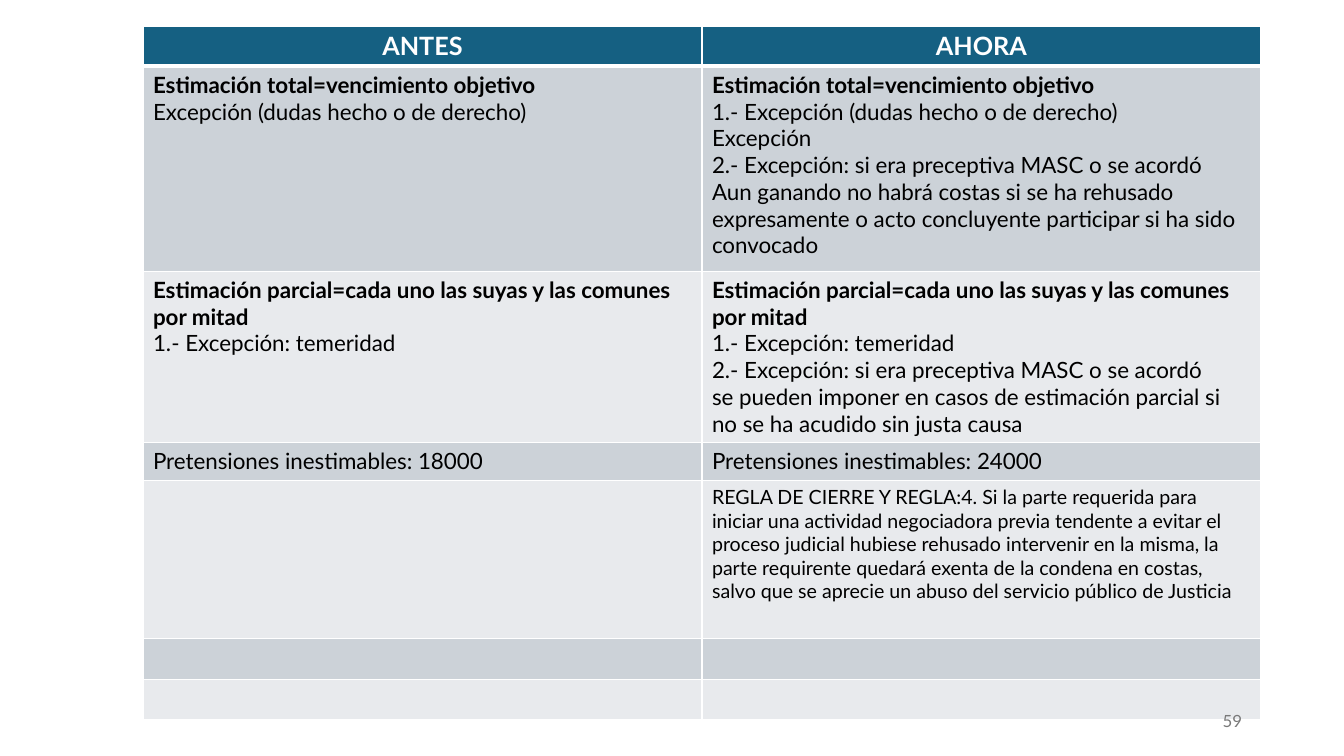
"""Build the slide comparing the cost rules before and now."""
from dataclasses import dataclass

from lxml.etree import SubElement
from pptx import Presentation
from pptx.dml.color import RGBColor
from pptx.enum.text import MSO_ANCHOR, PP_ALIGN
from pptx.oxml.ns import qn
from pptx.slide import Slide
from pptx.table import _Cell
from pptx.text.text import _Paragraph
from pptx.util import Emu, Pt

EMU_PER_PX = 12192000 / 1344


@dataclass(frozen=True)
class Theme:
    font: str = "Lato"
    header_fill: str = "156082"
    band_fills: tuple[str, str] = ("CCD2D8", "E8EAED")
    white: str = "FFFFFF"
    black: str = "000000"
    gray: str = "797979"
    header_size: int = 18
    body_size: int = 16
    closing_size: int = 14
    number_size: int = 12
    thin_border: int = 1
    thick_border: int = 3


@dataclass(frozen=True)
class CellText:
    heading: str = ""
    lines: tuple[str, ...] = ()
    size: int = 16


@dataclass(frozen=True)
class TableRow:
    height: int
    before: CellText = CellText()
    now: CellText = CellText()


THEME = Theme()
HEADER_HEIGHT = 40
HEADERS = ("ANTES", "AHORA")
TOTAL = "Estimación total=vencimiento objetivo"
PARTIAL = "Estimación parcial=cada uno las suyas y las comunes por mitad"
RECKLESS = "1.- Excepción: temeridad"
MANDATORY = "2.- Excepción: si era preceptiva MASC o se acordó"
ROWS = (
    TableRow(
        205,
        CellText(TOTAL, ("Excepción (dudas hecho o de derecho)",)),
        CellText(TOTAL, (
            "1.- Excepción (dudas hecho o de derecho)",
            "Excepción",
            MANDATORY,
            "Aun ganando no habrá costas si se ha rehusado expresamente o acto "
            "concluyente participar si ha sido convocado",
        )),
    ),
    TableRow(
        171,
        CellText(PARTIAL, (RECKLESS,)),
        CellText(PARTIAL, (
            RECKLESS,
            MANDATORY,
            "se pueden imponer en casos de estimación parcial si no se ha acudido "
            "sin justa causa",
        )),
    ),
    TableRow(
        38,
        CellText(lines=("Pretensiones inestimables: 18000",)),
        CellText(lines=("Pretensiones inestimables: 24000",)),
    ),
    TableRow(
        158,
        now=CellText(lines=(
            "REGLA DE CIERRE Y REGLA:4. Si la parte requerida para iniciar una "
            "actividad negociadora previa tendente a evitar el proceso judicial "
            "hubiese rehusado intervenir en la misma, la parte requirente quedará "
            "exenta de la condena en costas, salvo que se aprecie un abuso del "
            "servicio público de Justicia",
        ), size=THEME.closing_size),
    ),
    TableRow(40),
    TableRow(40),
)


def px(length: int) -> Emu:
    """Turn pixels into EMU."""
    return Emu(round(length * EMU_PER_PX))


def write(paragraph: _Paragraph, text: str, size: int, color: str,
          bold: bool = False, align: PP_ALIGN = PP_ALIGN.LEFT) -> None:
    """Fill a paragraph and format it."""
    paragraph.text = text
    paragraph.alignment = align
    font = paragraph.font
    font.name, font.size, font.bold = THEME.font, Pt(size), bold
    font.color.rgb = RGBColor.from_string(color)


def style_cell(cell: _Cell, fill: str, top: int, bottom: int) -> None:
    """Give a cell its white borders and its fill."""
    properties = cell._tc.get_or_add_tcPr()
    thin = THEME.thin_border
    for side, width in (("L", thin), ("R", thin), ("T", top), ("B", bottom)):
        line = SubElement(properties, qn(f"a:ln{side}"), w=str(Pt(width)))
        solid = SubElement(line, qn("a:solidFill"))
        SubElement(solid, qn("a:srgbClr"), val=THEME.white)
    cell.fill.solid()
    cell.fill.fore_color.rgb = RGBColor.from_string(fill)


def fill_cell(cell: _Cell, content: CellText) -> None:
    """Write the bold heading and the plain lines of a cell."""
    entries = [(content.heading, True)] if content.heading else []
    entries += [(line, False) for line in content.lines]
    frame = cell.text_frame
    for index, (text, bold) in enumerate(entries):
        paragraph = frame.add_paragraph() if index else frame.paragraphs[0]
        write(paragraph, text, content.size, THEME.black, bold)


def add_comparison(slide: Slide) -> None:
    """Draw the table of rules before and now."""
    heights = (HEADER_HEIGHT, *(row.height for row in ROWS))
    table = slide.shapes.add_table(
        len(heights), len(HEADERS), px(143), px(26), px(1118), px(sum(heights))
    ).table
    for table_row, height in zip(table.rows, heights):
        table_row.height = px(height)
    for column, header in enumerate(HEADERS):
        cell = table.cell(0, column)
        style_cell(cell, THEME.header_fill, THEME.thin_border, THEME.thick_border)
        write(cell.text_frame.paragraphs[0], header, THEME.header_size,
              THEME.white, True, PP_ALIGN.CENTER)
    for index, row in enumerate(ROWS):
        top = THEME.thin_border if index else THEME.thick_border
        for column, content in enumerate((row.before, row.now)):
            cell = table.cell(index + 1, column)
            style_cell(cell, THEME.band_fills[index % 2], top, THEME.thin_border)
            fill_cell(cell, content)


def add_page_number(slide: Slide, number: str) -> None:
    """Place the page number at the lower right."""
    box = slide.shapes.add_textbox(px(950), px(701), px(302), px(40))
    frame = box.text_frame
    frame.word_wrap = True
    frame.vertical_anchor = MSO_ANCHOR.MIDDLE
    write(frame.paragraphs[0], number, THEME.number_size, THEME.gray,
          align=PP_ALIGN.RIGHT)


def main() -> None:
    """Create and save the presentation."""
    presentation = Presentation()
    presentation.slide_width, presentation.slide_height = px(1344), px(756)
    slide = presentation.slides.add_slide(presentation.slide_layouts[6])
    add_comparison(slide)
    add_page_number(slide, "59")
    presentation.save("out.pptx")


if __name__ == "__main__":
    main()
